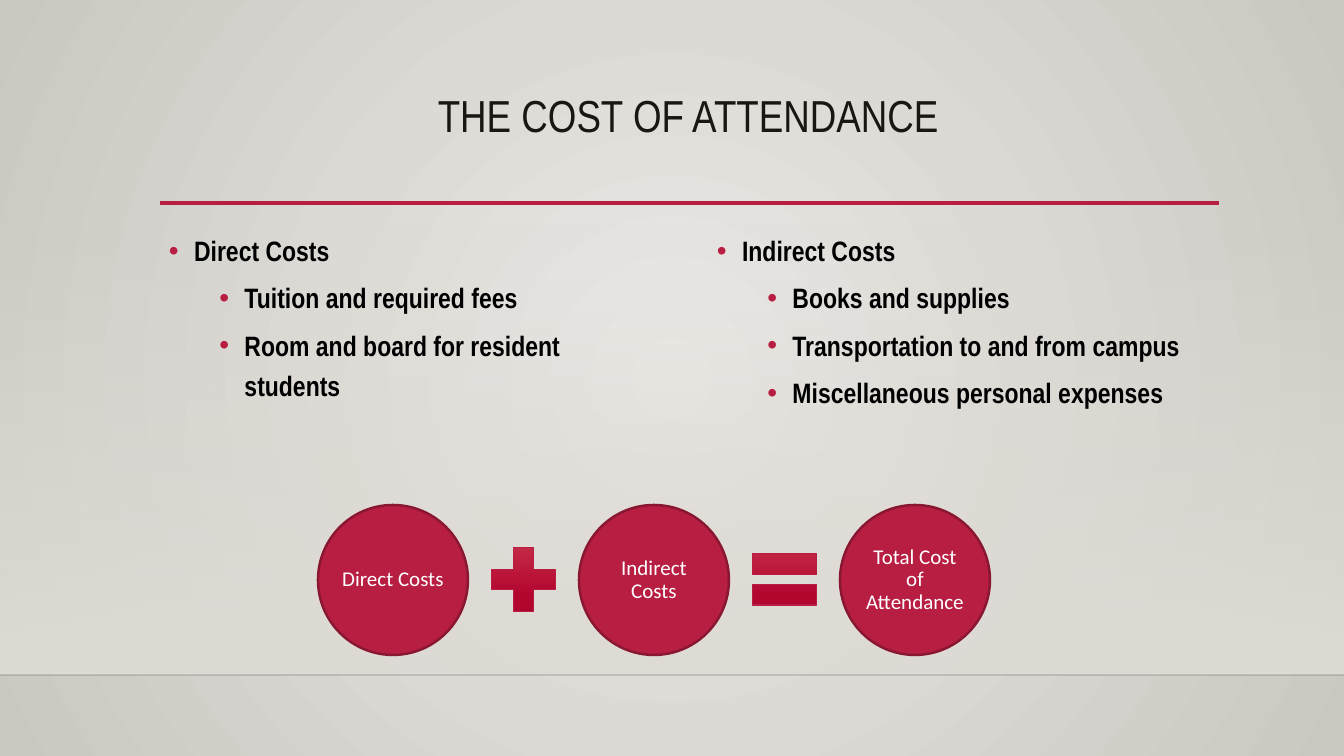
"""Build the cost of attendance slide."""
from lxml import etree
from pptx import Presentation
from pptx.dml.color import RGBColor
from pptx.enum.shapes import MSO_CONNECTOR, MSO_SHAPE
from pptx.enum.text import MSO_ANCHOR, PP_ALIGN
from pptx.oxml.ns import qn
from pptx.util import Pt

TITLE = "THE COST OF ATTENDANCE"
LISTS = [
    ("Direct Costs", ["Tuition and required fees",
                      "Room and board for resident students"]),
    ("Indirect Costs", ["Books and supplies",
                        "Transportation to and from campus",
                        "Miscellaneous personal expenses"]),
]
SUM = ["Direct Costs", "Indirect Costs", "Total Cost of Attendance"]
SIGNS = [MSO_SHAPE.MATH_PLUS, MSO_SHAPE.MATH_EQUAL]
COLORS = {"red": "B71E42", "rim": "891731", "title": "191613",
          "text": "000000", "white": "FFFFFF", "floor": "000001"}
BACK = [(0, "ECEAE7", 100), (100, "CAC7C1", 100)]
WALL = [(0, "DFDBD5", 0), (100, "DFDBD5", 100)]
SHINE = [(0, "C7304C", 100), (69, "B3062F", 100), (100, "AA062C", 100)]
NARROW, SANS = "Arial Narrow", "Calibri"
OVAL, RECT = MSO_SHAPE.OVAL, MSO_SHAPE.RECTANGLE
STRAIGHT = MSO_CONNECTOR.STRAIGHT
CENTER, LEFT = PP_ALIGN.CENTER, PP_ALIGN.LEFT
TOP, MIDDLE = MSO_ANCHOR.TOP, MSO_ANCHOR.MIDDLE
WIDE, HIGH = 1344, 756
SCALE = 914400 / 100.8


def px(*vals):
    return [round(v * SCALE) for v in vals]


def rgb(name):
    return RGBColor.from_string(COLORS[name])


def sub(node, tag, **attrs):
    return etree.SubElement(node, qn(tag), {k: str(v) for k, v in attrs.items()})


def fade(owner, stops, radial=False):
    owner.fill.solid()
    return stops, radial


def blend(fill, root, stops, radial=False):
    fill.solid()
    old = root.find(".//" + qn("a:solidFill"))
    grad = etree.Element(qn("a:gradFill"), rotWithShape="1")
    group = sub(grad, "a:gsLst")
    for pos, color, alpha in stops:
        stop = sub(group, "a:gs", pos=pos * 1000)
        tint = sub(stop, "a:srgbClr", val=color)
        if alpha < 100:
            sub(tint, "a:alpha", val=alpha * 1000)
    if radial:
        way = sub(grad, "a:path", path="circle")
        sub(way, "a:fillToRect", l=50000, t=50000, r=50000, b=50000)
    else:
        sub(grad, "a:lin", ang=5400000, scaled=0)
    old.getparent().replace(old, grad)


def add_shape(slide, kind, box, line=None, width=1):
    shape = slide.shapes.add_shape(kind, *px(*box))
    shape.shadow.inherit = False
    if line:
        shape.line.color.rgb = rgb(line)
        shape.line.width = Pt(width)
    else:
        shape.line.fill.background()
    return shape


def add_rule(slide, left, right, y, color, width, alpha=100):
    rule = slide.shapes.add_connector(STRAIGHT, *px(left, y, right, y))
    rule.line.color.rgb = rgb(color)
    rule.line.width = Pt(width)
    props = rule._element.spPr
    if alpha < 100:
        sub(props.find(".//" + qn("a:srgbClr")), "a:alpha", val=alpha * 1000)
    sub(props, "a:effectLst")


def set_frame(shape, anchor):
    frame = shape.text_frame
    frame.word_wrap = True
    frame.vertical_anchor = anchor
    return frame


def write(para, text, size, font, color, bold=False, align=CENTER, space=0.9):
    para.alignment = align
    para.line_spacing = space
    run = para.add_run()
    run.text = text
    run.font.size = Pt(size)
    run.font.name = font
    run.font.bold = bold
    run.font.color.rgb = rgb(color)


def add_dot(para, inset):
    props = para._p.get_or_add_pPr()
    left, hang = px(inset, -25.2)
    props.set("marL", str(left))
    props.set("indent", str(hang))
    sub(sub(props, "a:buClr"), "a:srgbClr", val=COLORS["red"])
    sub(props, "a:buFont", typeface="Arial")
    sub(props, "a:buChar", char="•")


def add_list(slide, left, head, items):
    box = slide.shapes.add_textbox(*px(left, 222, 512, 303))
    frame = set_frame(box, TOP)
    for i, text in enumerate([head] + items):
        para = frame.add_paragraph() if i else frame.paragraphs[0]
        add_dot(para, 75.6 if i else 25.2)
        if i:
            para.level = 1
            para.space_before = Pt(5)
        write(para, text, 20, NARROW, "text", True, LEFT, 1.2)


def add_ball(slide, left, text):
    ball = add_shape(slide, OVAL, (left, 505, 150, 150), "rim", 1.75)
    ball.fill.solid()
    ball.fill.fore_color.rgb = rgb("red")
    frame = set_frame(ball, MIDDLE)
    frame.margin_left, frame.margin_top, frame.margin_right, frame.margin_bottom = px(2, 2, 2, 2)
    write(frame.paragraphs[0], text, 15, SANS, "white")


def main():
    deck = Presentation()
    deck.slide_width, deck.slide_height = px(WIDE, HIGH)
    slide = deck.slides.add_slide(deck.slide_layouts[6])
    blend(slide.background.fill, slide._element, BACK, True)
    wall = add_shape(slide, RECT, (0, 223, WIDE, 452))
    blend(wall.fill, wall._element, WALL)
    add_rule(slide, 0, WIDE, 675, "floor", 1, 20)
    add_rule(slide, 160, 1219, 203, "red", 2.5)
    title = slide.shapes.add_textbox(*px(159, 89, 1059, 117))
    write(set_frame(title, TOP).paragraphs[0], TITLE, 32, NARROW, "title")
    for i, (head, items) in enumerate(LISTS):
        add_list(slide, 159 + 548 * i, head, items)
    for i, text in enumerate(SUM):
        left = 318 + 261 * i
        add_ball(slide, left, text)
        if i < len(SIGNS):
            sign = add_shape(slide, SIGNS[i], (left + 162, 536, 87, 87), "red", 0.75)
            blend(sign.fill, sign._element, SHINE)
    deck.save("out.pptx")


if __name__ == "__main__":
    main()
